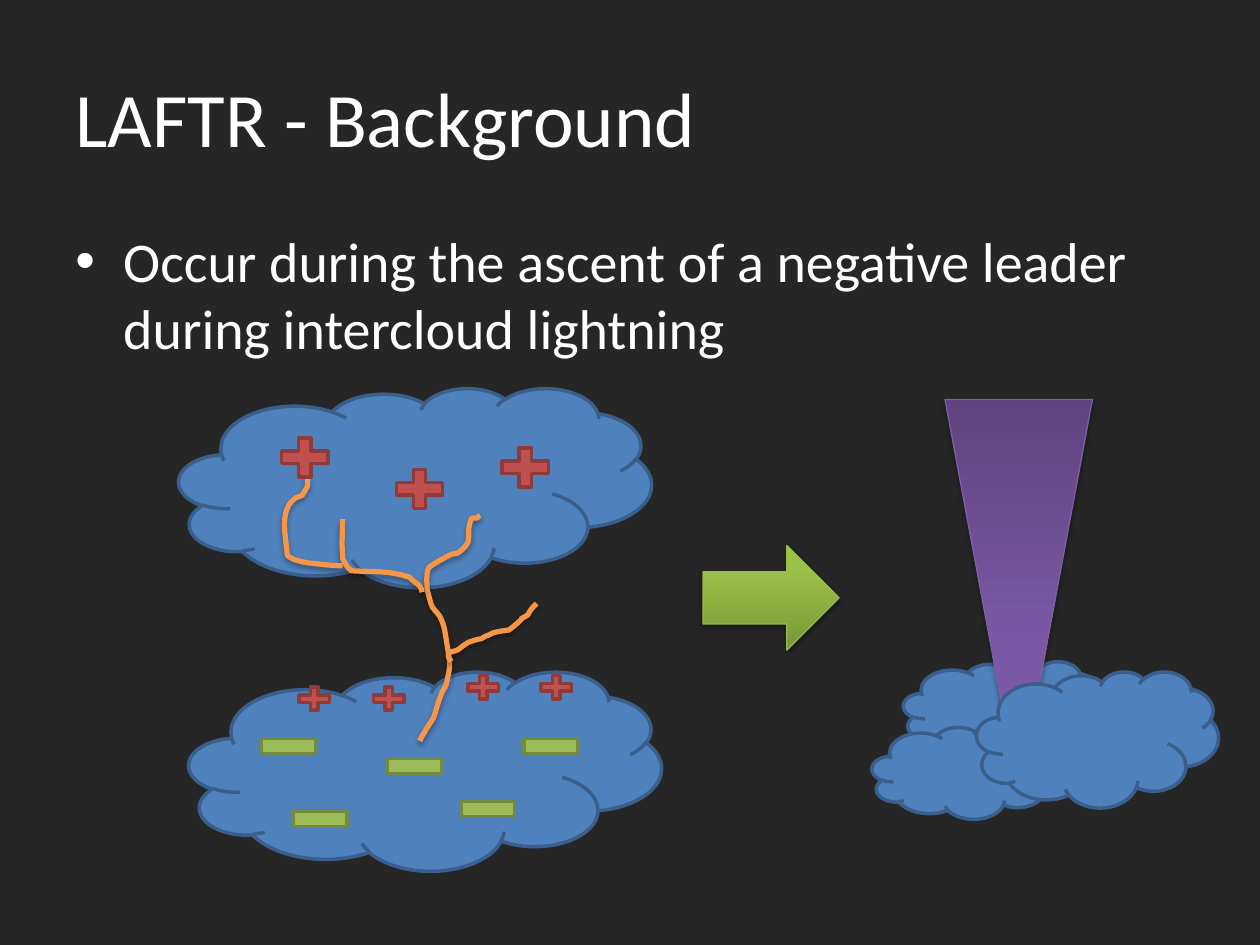
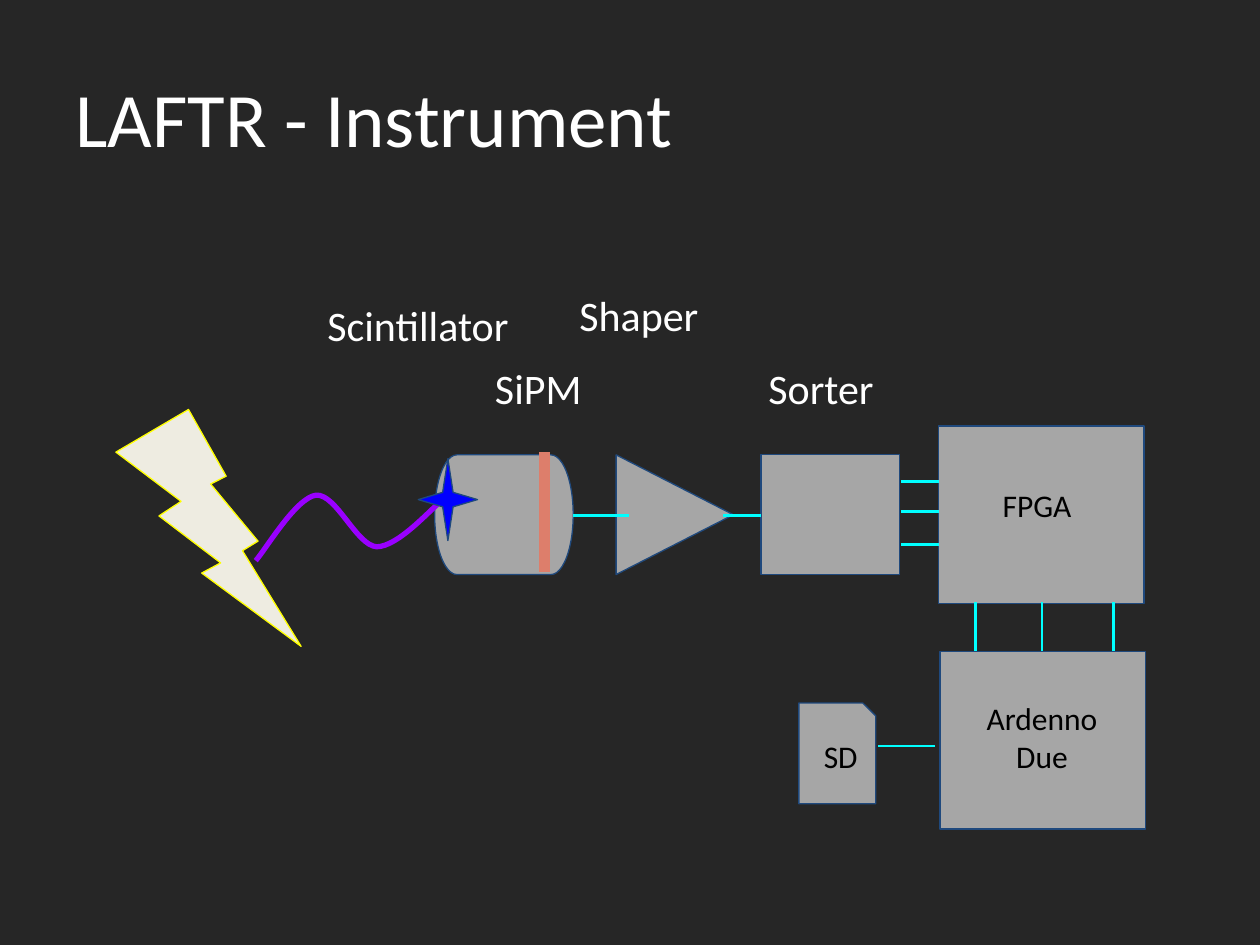
from lxml import etree
from pptx import Presentation
from pptx import util as u
from pptx.dml.color import RGBColor
from pptx.enum import shapes, text
from pptx.oxml import ns

FONT = "Calibri"
BACKGROUND = "262626"
WHITE = "FFFFFF"
BLACK = "000000"
CLOUD_FILL, CLOUD_LINE = "4F81BD", "3A5F8C"
PLUS_FILL, PLUS_LINE = "C0504D", "8E3B39"
MINUS_FILL, MINUS_LINE = "9BBB59", "738A42"
LEADER = "F79646"
DEVICE_FILL, DEVICE_LINE = "A6A6A6", "1F497D"
WIRE = "00FFFF"
KIND = shapes.MSO_SHAPE


def colour(value):
    return RGBColor.from_string(value)


def bend(stroke, segments):
    outline = stroke._element.find(".//" + ns.qn("a:path"))
    lines = iter(outline.findall(ns.qn("a:lnTo")))
    for segment in segments:
        first = next(lines)
        if len(segment) == 6:
            first.tag = ns.qn("a:cubicBezTo")
            for _ in range(2):
                control = next(lines)
                first.append(control[0])
                outline.remove(control)


class Panel:
    def __init__(self, page, left, top):
        self.page, self.left, self.top = page, left, top

    def place(self, x, y):
        return u.Inches(self.left + x), u.Inches(self.top + y)

    def shape(self, kind, x, y, width, height, fill, line, weight=0.75,
              adjust=None, turn=0, shadow=False):
        box = self.page.shapes.add_shape(
            kind, *self.place(x, y), u.Inches(width), u.Inches(height))
        if isinstance(fill, tuple):
            box.fill.gradient()
            box.fill.gradient_angle = 90
            for stop, value, position in zip(box.fill.gradient_stops, fill, (0, 0.8)):
                stop.color.rgb = colour(value)
                stop.position = position
        else:
            box.fill.solid()
            box.fill.fore_color.rgb = colour(fill)
        box.line.color.rgb = colour(line)
        box.line.width = u.Pt(weight)
        box.rotation = turn
        if adjust is not None:
            box.adjustments[0] = adjust
        if not shadow:
            box.shadow.inherit = False

    def cloud(self, x, y, width, height):
        self.shape(KIND.CLOUD, x, y, width, height, CLOUD_FILL, CLOUD_LINE, 2)

    def device(self, kind, x, y, width, height, **options):
        self.shape(kind, x, y, width, height, DEVICE_FILL, DEVICE_LINE, **options)

    def line(self, start, end, value=WIRE, weight=1.5):
        wire = self.page.shapes.add_connector(
            shapes.MSO_CONNECTOR.STRAIGHT, *self.place(*start), *self.place(*end))
        wire.line.color.rgb = colour(value)
        wire.line.width = u.Pt(weight)
        etree.SubElement(wire._element.spPr, ns.qn("a:effectLst"))

    def curve(self, start, segments, value, shadow=False):
        points = [self.place(*segment[i:i + 2])
                  for segment in segments for i in range(0, len(segment), 2)]
        builder = self.page.shapes.build_freeform(*self.place(*start), scale=1.0)
        builder.add_line_segments(points, close=False)
        stroke = builder.convert_to_shape()
        bend(stroke, segments)
        stroke.fill.background()
        stroke.line.color.rgb = colour(value)
        stroke.line.width = u.Pt(3)
        if not shadow:
            stroke.shadow.inherit = False

    def text(self, words, x, y, width, height, size=24, value=WHITE, fill=None,
             inset=0.05, anchor=text.MSO_ANCHOR.TOP, align=text.PP_ALIGN.LEFT,
             bullet=None):
        box = self.page.shapes.add_textbox(
            *self.place(x, y), u.Inches(width), u.Inches(height))
        if fill:
            box.fill.solid()
            box.fill.fore_color.rgb = colour(fill)
        frame = box.text_frame
        frame.word_wrap = True
        frame.vertical_anchor = anchor
        frame.margin_left = frame.margin_right = u.Inches(0.1)
        frame.margin_top = frame.margin_bottom = u.Inches(inset)
        frame.text = words
        for para in frame.paragraphs:
            para.alignment = align
            for span in para.runs:
                span.font.name = FONT
                span.font.size = u.Pt(size)
                span.font.color.rgb = colour(value)
            if bullet:
                properties = para._p.get_or_add_pPr()
                properties.set("marL", str(u.Inches(0.38)))
                properties.set("indent", str(u.Inches(-0.38)))
                etree.SubElement(properties, ns.qn("a:buFont"), typeface="Arial")
                etree.SubElement(properties, ns.qn("a:buChar"), char=bullet)


def add_page(deck, title):
    page = deck.slides.add_slide(deck.slide_layouts[6])
    page.background.fill.solid()
    page.background.fill.fore_color.rgb = colour(BACKGROUND)
    Panel(page, 0.5, 0.3).text(title, 0, 0, 9, 1.25, size=44,
                               anchor=text.MSO_ANCHOR.MIDDLE)
    return page


def draw_leader(panel):
    trunk = [
        (2.35, 2.85, 2.35, 2.83, 2.37, 2.81), (2.39, 2.77, 2.44, 2.7, 2.44, 2.7),
        (2.49, 2.54), (2.5, 2.53, 2.5, 2.51, 2.51, 2.49), (2.54, 2.44),
        (2.58, 2.25, 2.58, 2.32, 2.53, 2), (2.52, 1.96, 2.51, 1.93, 2.49, 1.89),
        (2.47, 1.86, 2.43, 1.83, 2.42, 1.79), (2.39, 1.68),
        (2.39, 1.63, 2.38, 1.56, 2.4, 1.51), (2.41, 1.49, 2.54, 1.42, 2.58, 1.4),
        (2.6, 1.4, 2.61, 1.39, 2.63, 1.39), (2.65, 1.37, 2.67, 1.37, 2.68, 1.35),
        (2.76, 1.27, 2.69, 1.25, 2.74, 1.12), (2.74, 1.11, 2.77, 1.11, 2.79, 1.11),
        (2.8, 1.1, 2.8, 1.09, 2.81, 1.09)]
    middle = [
        (2.35, 1.68, 2.34, 1.66, 2.33, 1.65), (2.32, 1.63, 2.3, 1.63, 2.28, 1.61),
        (2.27, 1.6, 2.26, 1.59, 2.25, 1.58), (2.22, 1.57, 2.2, 1.57, 2.18, 1.56),
        (2.03, 1.53, 1.98, 1.54, 1.79, 1.53), (1.77, 1.51, 1.75, 1.5, 1.74, 1.47),
        (1.72, 1.45, 1.72, 1.43, 1.72, 1.4), (1.71, 1.31, 1.72, 1.22, 1.72, 1.12)]
    left = [
        (1.64, 1.49, 1.56, 1.48, 1.47, 1.47), (1.43, 1.47, 1.33, 1.44, 1.33, 1.44),
        (1.32, 1.43, 1.28, 1.42, 1.28, 1.4), (1.27, 1.26, 1.21, 1.04, 1.35, 0.95),
        (1.37, 0.94, 1.39, 0.94, 1.4, 0.93), (1.45, 0.84, 1.44, 0.89, 1.44, 0.79)]
    right = [
        (2.57, 2.23, 2.55, 2.21, 2.56, 2.19), (2.57, 2.17, 2.61, 2.17, 2.63, 2.16),
        (2.66, 2.14, 2.68, 2.12, 2.7, 2.11), (2.72, 2.09, 2.81, 2.07, 2.82, 2.07),
        (2.84, 2.06, 2.86, 2.04, 2.88, 2.04), (2.92, 2.01, 2.99, 2.01, 3.04, 2),
        (3.05, 1.99, 3.07, 1.98, 3.09, 1.96), (3.22, 1.85, 3.06, 1.96, 3.19, 1.88),
        (3.2, 1.86, 3.21, 1.84, 3.23, 1.82), (3.24, 1.81, 3.26, 1.79, 3.26, 1.79)]
    for start, branch in [((2.33, 2.88), trunk), ((2.35, 1.7), middle),
                          ((1.72, 1.49), left), ((2.58, 2.25), right)]:
        panel.curve(start, branch, LEADER, shadow=True)


def draw_charged_clouds(page, left, top):
    panel = Panel(page, left, top)
    panel.cloud(0.5, 2.33, 3.75, 1.58)
    panel.cloud(0.42, 0.08, 3.75, 1.58)
    draw_leader(panel)
    large, small = (0.5, 0.42), (0.33, 0.25)
    pluses = [(2.08, 0.67, large), (2.92, 0.5, large), (1.17, 0.42, large),
              (1.33, 2.42, small), (1.92, 2.42, small),
              (2.67, 2.33, small), (3.25, 2.33, small)]
    for x, y, size in pluses:
        panel.shape(KIND.MATH_PLUS, x, y, *size, PLUS_FILL, PLUS_LINE, 2)
    for x, y in [(3.08, 2.67), (2.58, 3.17), (1, 2.67), (2, 2.83), (1.25, 3.25)]:
        panel.shape(KIND.MATH_MINUS, x, y, 0.58, 0.5, MINUS_FILL, MINUS_LINE, 2)


def draw_flash(page, left, top):
    panel = Panel(page, left, top)
    panel.shape(KIND.RIGHT_ARROW, 0, 1.33, 1.08, 0.83, ("779737", "9BC348"),
                "98B955", shadow=True)
    panel.cloud(1.59, 2.25, 1.58, 0.75)
    panel.cloud(1.34, 2.75, 1.58, 0.75)
    panel.shape(KIND.TRAPEZOID, 1.92, 0.17, 1.17, 2.42, ("5F4480", "7B58A6"),
                "7D60A0", adjust=0.385, turn=180, shadow=True)
    panel.cloud(2.17, 2.33, 1.92, 1.08)


def draw_detector(panel):
    panel.device(KIND.RECTANGLE, 5.54, 1.61, 1.1, 0.95)
    panel.device(KIND.FLOWCHART_TERMINATOR, 2.95, 1.61, 1.1, 0.95)
    panel.shape(KIND.LIGHTNING_BOLT, 0.42, 1.25, 1.47, 1.88, "EEECE1", "FFFF00")
    pulse = [(1.61, 2.36, 1.85, 1.95, 2.01, 1.93), (2.17, 1.92, 2.33, 2.33, 2.49, 2.34),
             (2.66, 2.34, 2.92, 2.04, 3, 1.98)]
    panel.curve((1.53, 2.45), pulse, "9900FF")
    panel.shape(KIND.STAR_4_POINT, 2.82, 1.64, 0.47, 0.65, "0000FF", DEVICE_LINE,
                adjust=0.125)
    panel.device(KIND.FLOWCHART_MERGE, 4.38, 1.62, 0.95, 0.93, turn=270)
    for start, end in [(4.05, 4.49), (5.24, 5.54)]:
        panel.line((start, 2.09), (end, 2.09))


def draw_boards(panel):
    board = dict(size=18, value=BLACK, inset=0.1)
    panel.device(KIND.RECTANGLE, 6.95, 1.38, 1.63, 1.41)
    panel.text("FPGA", 7.36, 1.76, 1.1, 0.65, **board)
    for y in (1.82, 2.06, 2.32):
        panel.line((6.65, y), (6.95, y))
    for x in (7.24, 7.77, 8.34):
        panel.line((x, 2.78), (x, 3.17))
    panel.device(KIND.RECTANGLE, 6.96, 3.17, 1.63, 1.41)
    panel.text("Ardenno\nDue", 7.14, 3.45, 1.26, 0.89, fill=DEVICE_FILL,
               align=text.PP_ALIGN.CENTER, **board)
    panel.line((6.47, 3.92), (6.92, 3.92))
    panel.device(KIND.SNIP_1_RECTANGLE, 5.84, 3.58, 0.61, 0.8, adjust=0.167)
    panel.text("SD", 5.94, 3.75, 0.56, 0.65, **board)


def draw_instrument(page, left, top):
    panel = Panel(page, left, top)
    draw_detector(panel)
    draw_boards(panel)
    panel.line((3.82, 1.59), (3.82, 2.54), "DD7E6B", 6)
    labels = [("SiPM", 3.33, 0.83, 0.92), ("Scintillator", 2, 0.33, 1.67),
              ("Shaper", 4, 0.25, 1.17), ("Sorter", 5.5, 0.83, 1.08)]
    for words, x, y, width in labels:
        panel.text(words, x, y, width, 0.5)


def main():
    deck = Presentation()
    deck.slide_width, deck.slide_height = u.Inches(10), u.Inches(7.5)

    background = add_page(deck, "LAFTR - Background")
    Panel(background, 0.5, 1.75).text(
        "Occur during the ascent of a negative leader during intercloud lightning",
        0, 0, 9, 4.95, size=32, bullet="•")
    draw_charged_clouds(background, 1, 3)
    draw_flash(background, 5.58, 3)

    instrument = add_page(deck, "LAFTR - Instrument")
    draw_instrument(instrument, 0.5, 2)

    deck.save("out.pptx")


if __name__ == "__main__":
    main()
